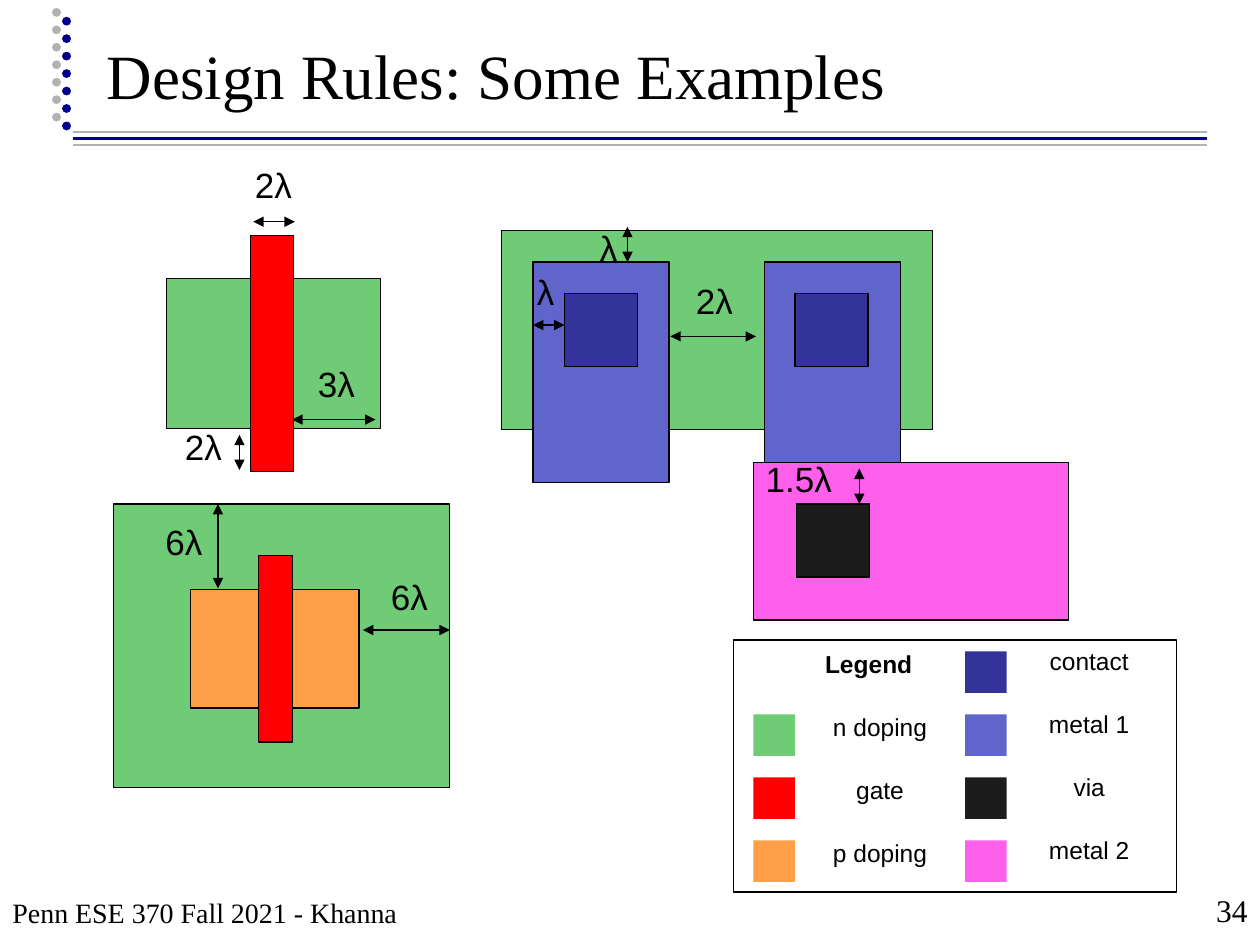
import pptx
import pptx.util
import pptx.dml.color
import pptx.enum.dml
import pptx.enum.shapes
import pptx.enum.text
import lxml.etree

rgb = pptx.dml.color.RGBColor.from_string
Pt = pptx.util.Pt
ALIGN = pptx.enum.text.PP_ALIGN
ANCHOR = pptx.enum.text.MSO_ANCHOR
A = "{http://schemas.openxmlformats.org/drawingml/2006/main}"

prs = pptx.Presentation()
prs.slide_width = pptx.util.Inches(10)
prs.slide_height = pptx.util.Inches(7.5)
s = prs.slides.add_slide(prs.slide_layouts[6])
COL = prs.slide_width / 100
ROW = prs.slide_height / 75

N_DOPING, P_DOPING, GATE = "6FCB75", "FFA048", "FF0000"
METAL_1, METAL_2, CONTACT, VIA = "6065CC", "FF60EB", "333399", "1C1C1C"
BLACK, NAVY, GREY = "000000", "000090", "B2B2B2"


def grid(*lengths):
    return [round(n * (ROW if i % 2 else COL)) for i, n in enumerate(lengths)]


def write(text, box, size=20, font="Arial", align=ALIGN.CENTER, anchor=ANCHOR.TOP, bold=False):
    tf = s.shapes.add_textbox(*grid(*box)).text_frame
    for name, value in {"word_wrap": True, "vertical_anchor": anchor}.items():
        setattr(tf, name, value)
    p = tf.paragraphs[0]
    p.alignment = align
    r = p.add_run()
    r.text = text
    for name, value in {"size": Pt(size), "name": font, "bold": bold}.items():
        setattr(r.font, name, value)
    r.font.color.rgb = rgb(BLACK)


rects = [
    (9, 40, 26.7, 22.5, N_DOPING, BLACK),
    (15.1, 46.8, 13.4, 9.4, P_DOPING, BLACK),
    (20.5, 44.1, 2.7, 14.8, GATE, BLACK),
    (13.2, 22.1, 17, 11.9, N_DOPING, BLACK),
    (19.9, 18.7, 3.4, 18.7, GATE, BLACK),
    (39.8, 18.3, 34.2, 15.8, N_DOPING, BLACK),
    (42.3, 20.8, 10.8, 17.5, METAL_1, BLACK),
    (44.8, 23.3, 5.8, 5.8, CONTACT, BLACK),
    (60.7, 20.8, 10.8, 25.8, METAL_1, BLACK),
    (63.1, 23.3, 5.8, 5.8, CONTACT, BLACK),
    (59.8, 36.7, 25, 12.5, METAL_2, BLACK),
    (63.2, 40, 5.8, 5.8, VIA, BLACK),
    (58.2, 50.8, 35.2, 20, None, BLACK),
]
legend = [
    (59.8, 63.2, 51, [(None, "Legend"), (N_DOPING, "n doping"), (GATE, "gate"), (P_DOPING, "p doping")]),
    (76.6, 79.8, 50.8, [(CONTACT, "contact"), (METAL_1, "metal 1"), (VIA, "via"), (METAL_2, "metal 2")]),
]
for swatch_x, label_x, top, entries in legend:
    for i, (fill, label) in enumerate(entries):
        if fill:
            rects.append((swatch_x, 51.7 + 5 * i, 3.3, 3.3, fill, None))

for *box, fill, line in rects:
    sp = s.shapes.add_shape(pptx.enum.shapes.MSO_SHAPE.RECTANGLE, *grid(*box))
    sp.shadow.inherit = False
    for part, color in ((sp.fill, fill), (sp.line.fill, line)):
        if color:
            part.solid()
            part.fore_color.rgb = rgb(color)
        else:
            part.background()
    if line:
        sp.line.width = Pt(0.75)

lines = [
    (5.8, 11, 95.8, 11, NAVY, 2, "rule"),
    (5.8, 11.5, 95.8, 11.5, GREY, 1, "rule"),
    (5.8, 10.5, 95.8, 10.5, GREY, 1, "rule"),
    (4.5, 9.3, 4.5, 0.1, GREY, 5, "dots"),
    (5.3, 10, 5.3, 0.8, NAVY, 5, "dots"),
]
for ends in [
    (28.8, 50, 35.7, 50),
    (17.3, 40, 17.3, 46.7),
    (23.2, 33.3, 29.8, 33.3),
    (19, 34.5, 19, 37.3),
    (20.1, 17.6, 23.4, 17.6),
    (42.3, 25.8, 44.8, 25.8),
    (49.8, 18, 49.8, 20.8),
    (53.2, 26.7, 60, 26.7),
    (68.2, 37.2, 68.2, 40),
]:
    lines.append((*ends, BLACK, 0.75, "arrow"))

for *ends, color, width, kind in lines:
    c = s.shapes.add_connector(pptx.enum.shapes.MSO_CONNECTOR.STRAIGHT, *grid(*ends))
    c.line.color.rgb = rgb(color)
    c.line.width = Pt(width)
    ln = c.line._get_or_add_ln()
    if kind == "dots":
        c.line.dash_style = pptx.enum.dml.MSO_LINE.ROUND_DOT
        ln.set("cap", "rnd")
    if kind == "arrow":
        for end in ("headEnd", "tailEnd"):
            lxml.etree.SubElement(ln, A + end, type="triangle")
    lxml.etree.SubElement(c._element.spPr, A + "effectLst")

for text, x, y, w in [
    ("2λ", 12.5, 33.3, 7.3),
    ("6λ", 29, 45.2, 7),
    ("6λ", 11.1, 40.8, 7),
    ("3λ", 23.2, 28.3, 7),
    ("2λ", 18.2, 12.5, 7),
    ("λ", 39.8, 21, 7),
    ("λ", 44.8, 17.5, 7),
    ("2λ", 53.2, 21.7, 7),
    ("1.5λ", 57.8, 35.8, 11.2),
]:
    write(text, (x, y, w, 4.4))

for swatch_x, label_x, top, entries in legend:
    for i, (fill, label) in enumerate(entries):
        x = label_x if fill else label_x - 0.9
        write(label, (x, top + 5 * i, 13.3, 3.4), 14, bold=fill is None)

for text, box, size, align in [
    ("Design Rules: Some Examples", (7.5, 1.1, 85.2, 8.3), 36, ALIGN.LEFT),
    ("Penn ESE 370 Fall 2021 - Khanna", (0, 69.2, 54.2, 5), 16, ALIGN.LEFT),
    ("34", (79.2, 69.2, 20.8, 5), 18, ALIGN.RIGHT),
]:
    write(text, box, size, "Times New Roman", align, ANCHOR.BOTTOM)

prs.save("out.pptx")
